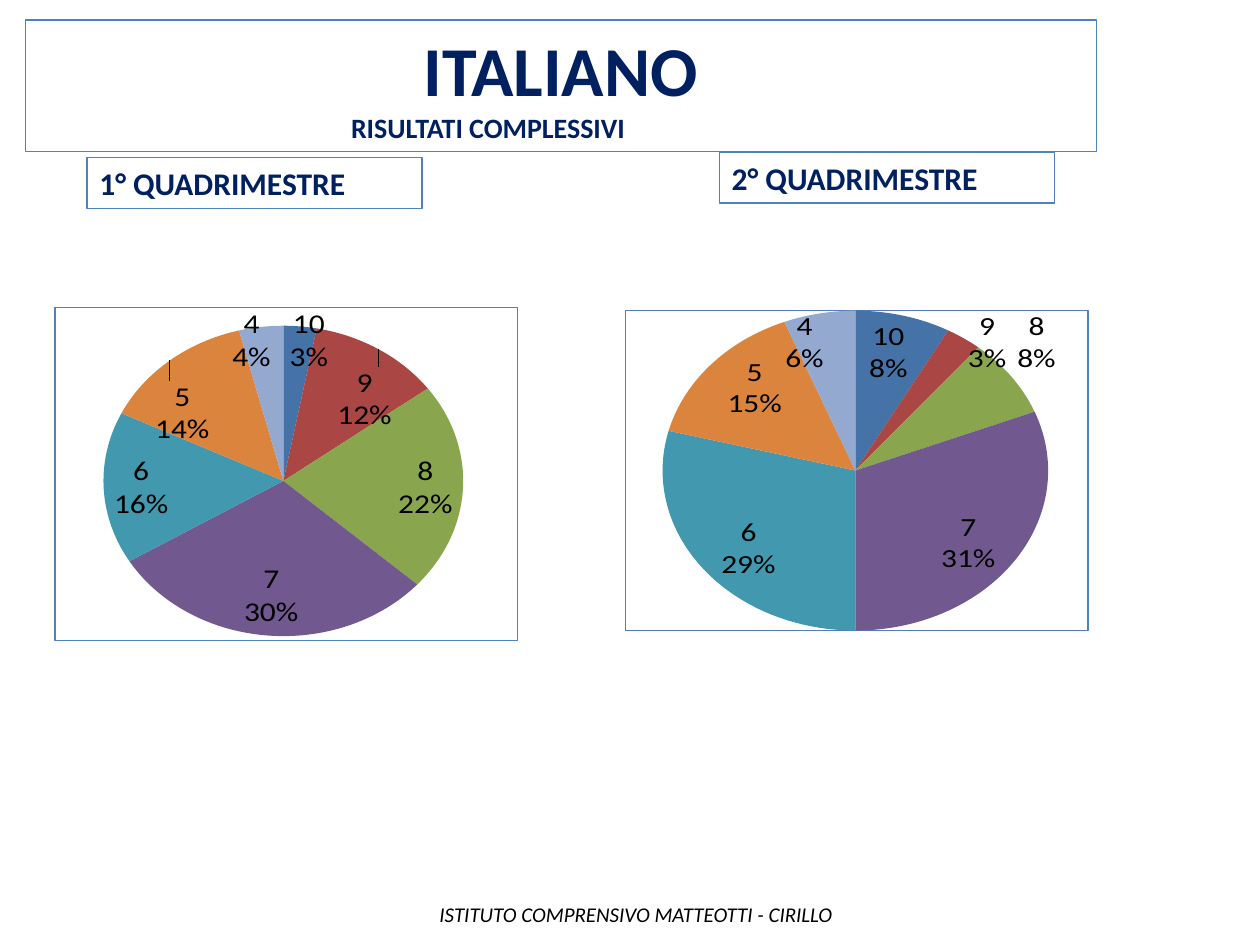
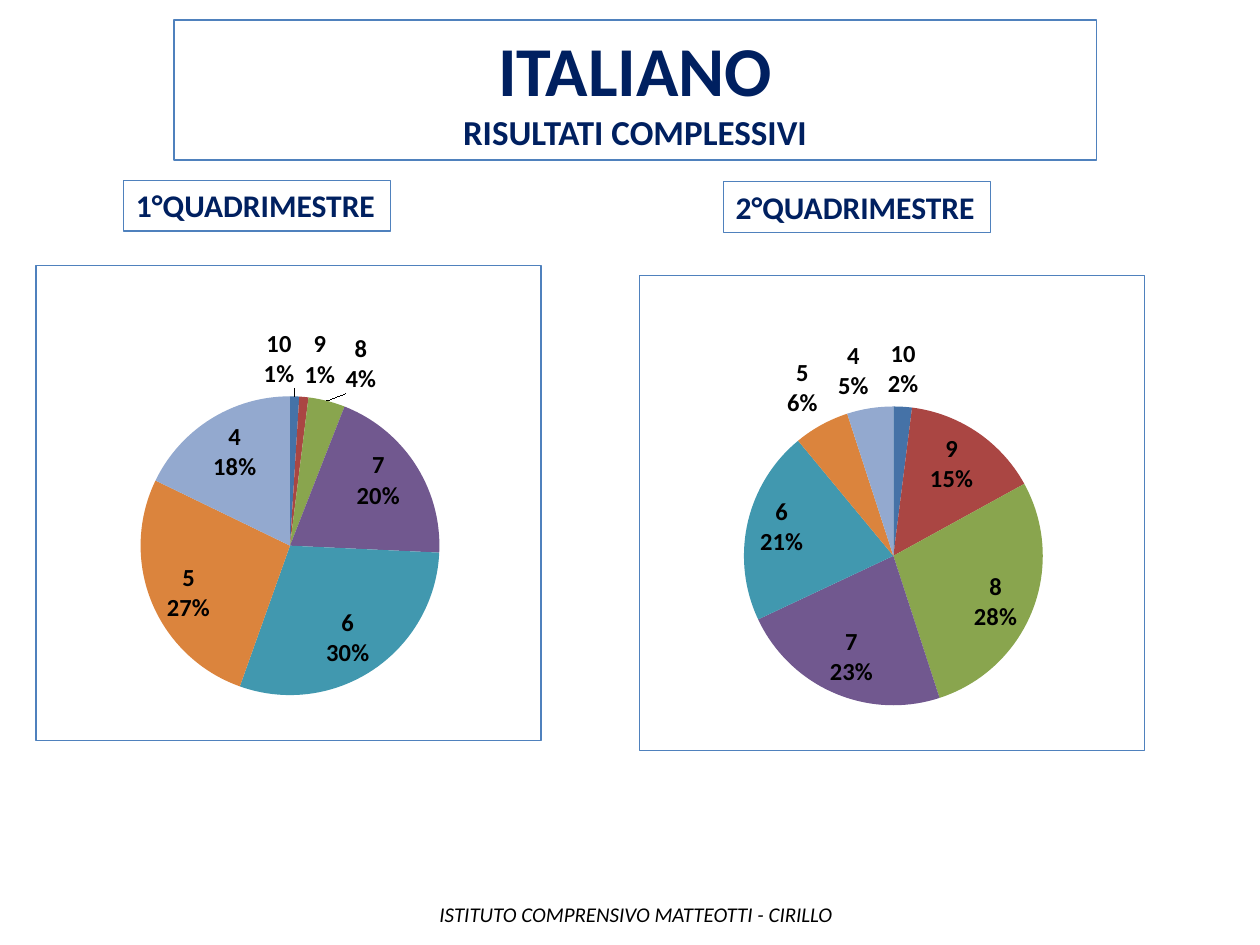
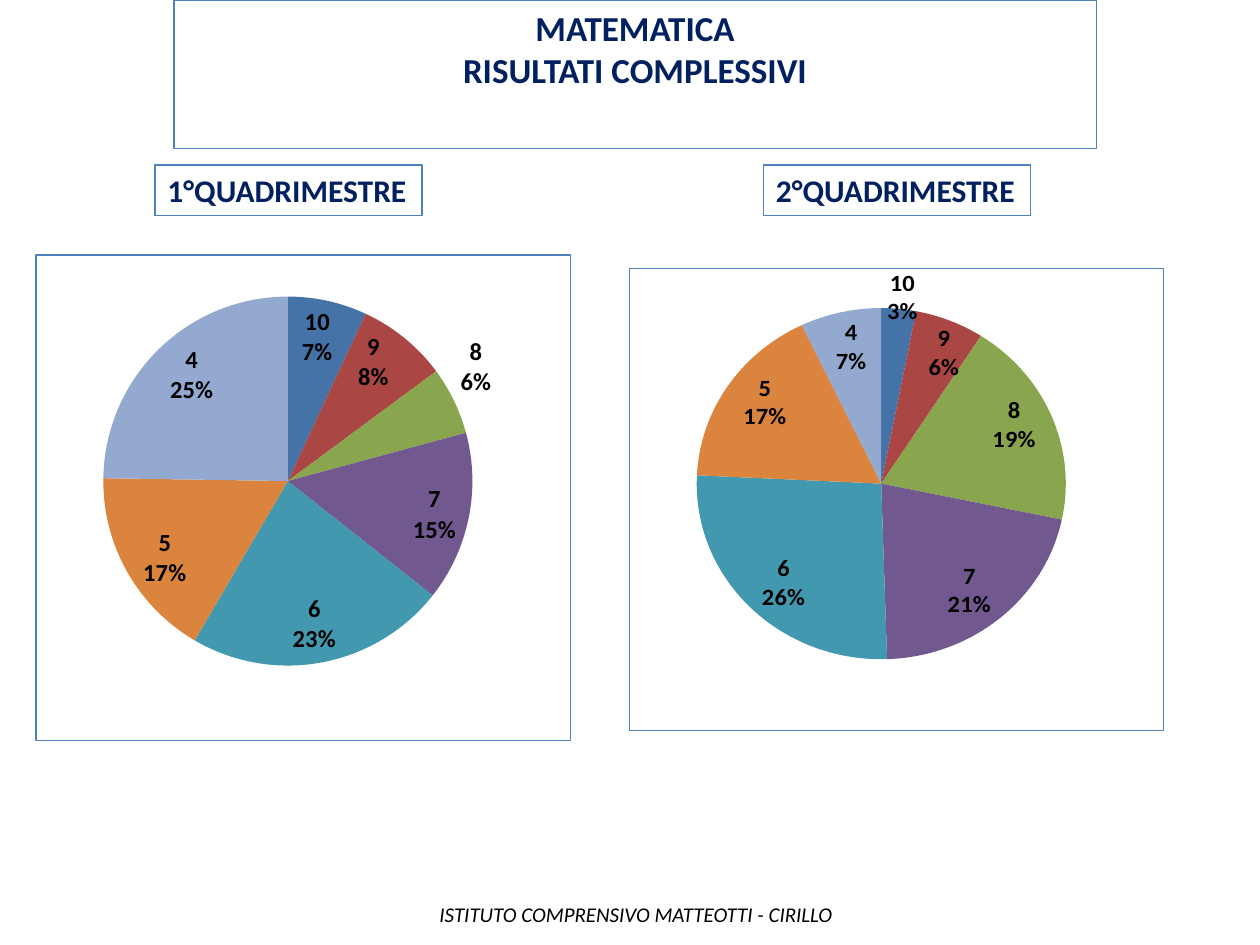
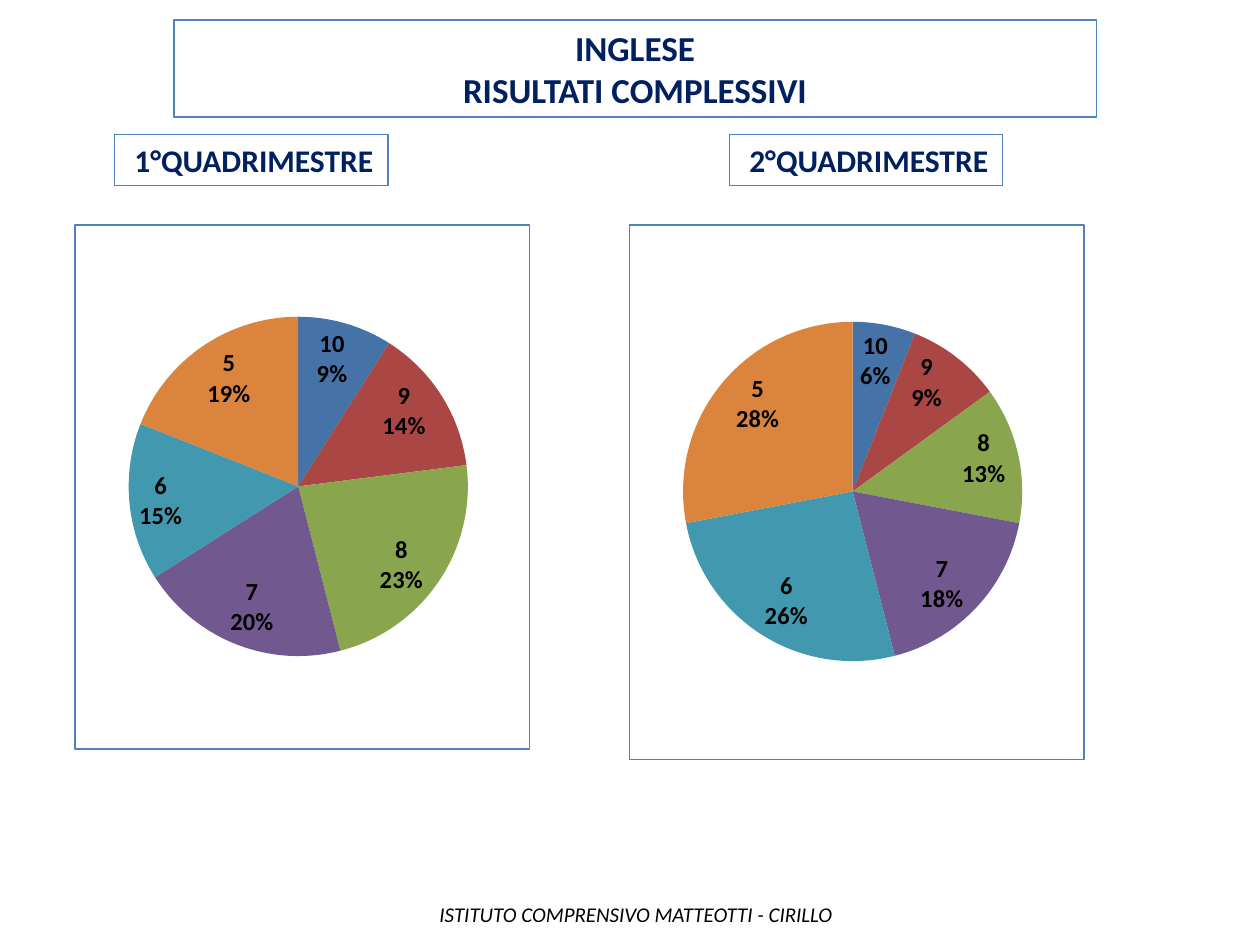
from dataclasses import dataclass

from pptx import Presentation
from pptx.chart.data import CategoryChartData
from pptx.dml.color import RGBColor
from pptx.enum.chart import XL_CHART_TYPE, XL_LABEL_POSITION
from pptx.enum.shapes import MSO_SHAPE
from pptx.enum.text import MSO_ANCHOR, MSO_AUTO_SIZE, PP_ALIGN
from pptx.oxml import parse_xml
from pptx.oxml.ns import nsdecls, qn
from pptx.util import Pt

PIE = XL_CHART_TYPE.PIE
BEST_FIT = XL_LABEL_POSITION.BEST_FIT
RECTANGLE = MSO_SHAPE.RECTANGLE
TOP = MSO_ANCHOR.TOP
FIXED_SIZE = MSO_AUTO_SIZE.NONE
LEFT, CENTER = PP_ALIGN.LEFT, PP_ALIGN.CENTER
TITLE_ONLY = 5


@dataclass(frozen=True)
class Theme:
    """Colours, font and type sizes shared by all slides."""

    font: str = "Calibri"
    navy: str = "002060"
    black: str = "000000"
    border: str = "4F81BD"
    slices: tuple = ("4572A7", "AA4643", "89A54E", "71588F",
                     "4198AF", "DB843D", "93A9CF")
    line: float = 0.75
    subject: int = 40
    heading: int = 20
    subheading: int = 16
    term: int = 18
    label: int = 14
    footer: int = 12


THEME = Theme()
GRADES = ("10", "9", "8", "7", "6", "5", "4")
RESULTS = "RISULTATI COMPLESSIVI"
FOOTER = "ISTITUTO COMPRENSIVO MATTEOTTI - CIRILLO"
FOOTER_PLACE = (241.2, 511.9, 248.4, 21.6)
WIDE_TITLE = (99.4, 11.5, 527)
LARGE_LABELS = {"size": Pt(THEME.term), "bold": False}
BOLD_LABELS = {"size": Pt(THEME.label), "bold": True}

SLIDES = (
    {
        "title": (14.4, 11.5, 612, 74.9),
        "lines": (("ITALIANO", THEME.subject, 0), (RESULTS, THEME.subheading, 179)),
        "labels": LARGE_LABELS,
        "plot": (0.105, 0.054, 0.778, 0.933),
        "terms": (
            {"text": "1° QUADRIMESTRE", "box": (49.7, 90, 191.5, 29),
             "chart": (31, 145.4, 265, 221), "values": (3, 12, 22, 30, 16, 14, 4)},
            {"text": "2° QUADRIMESTRE", "box": (411, 87.1, 191.5, 29),
             "chart": (357.1, 139.7, 265, 221), "values": (8, 3, 8, 31, 29, 15, 6),
             "plot": (0.074, 0, 0.846, 1)},
        ),
    },
    {
        "title": (*WIDE_TITLE, 79.9),
        "lines": (("ITALIANO", THEME.subject, 0), (RESULTS, THEME.heading, 0)),
        "plot": (0.183, 0.276, 0.64, 0.629),
        "terms": (
            {"text": "1°QUADRIMESTRE", "box": (70.6, 103, 152.6, 29),
             "chart": (20.2, 151.2, 289.4, 272.2), "values": (1, 1, 4, 20, 30, 27, 18)},
            {"text": "2°QUADRIMESTRE", "box": (413.3, 103.7, 152.6, 29),
             "chart": (365, 157, 289.4, 272.2), "values": (2, 15, 28, 23, 21, 6, 5)},
        ),
    },
    {
        "title": (99.4, 0, 527, 85),
        "lines": (("MATEMATICA", THEME.heading, 0), (RESULTS, THEME.heading, 0)),
        "plot": (0.126, 0.073, 0.691, 0.786),
        "terms": (
            {"text": "1°QUADRIMESTRE", "box": (88.6, 94.3, 152.6, 29),
             "chart": (20.2, 145.4, 306, 278), "values": (7, 8, 6, 15, 23, 17, 25)},
            {"text": "2°QUADRIMESTRE", "box": (436.3, 94.3, 152.6, 29),
             "chart": (359.3, 139.7, 306, 278), "values": (3, 6, 19, 21, 26, 17, 7)},
        ),
    },
    {
        "title": (*WIDE_TITLE, 55.4),
        "lines": (("INGLESE", THEME.heading, 0), (RESULTS, THEME.heading, 0)),
        "plot": (0.118, 0.173, 0.746, 0.652),
        "inset": 11.3,
        "terms": (
            {"text": "1°QUADRIMESTRE", "box": (65.5, 77, 156.2, 29),
             "chart": (42.5, 128.2, 260.6, 300.2), "values": (9, 14, 23, 20, 15, 19, 0)},
            {"text": "2°QUADRIMESTRE", "box": (416.9, 77, 156.2, 29),
             "chart": (359.3, 128.2, 260.6, 306), "values": (6, 9, 13, 18, 26, 28, 0)},
        ),
    },
)


def points(place):
    """Turn plain numbers into point lengths."""
    return [Pt(length) for length in place]


def set_format(target, values):
    """Set each named attribute on the target."""
    for name, value in values.items():
        setattr(target, name, value)


def style_font(font, color, **values):
    """Give a font the deck typeface, a colour and other values."""
    set_format(font, {"name": THEME.font, **values})
    font.color.rgb = RGBColor.from_string(color)


def outline(shape):
    """Give a shape the thin blue border and no fill."""
    shape.fill.background()
    shape.line.color.rgb = RGBColor.from_string(THEME.border)
    shape.line.width = Pt(THEME.line)


def add_title(page, place, lines):
    """Place the framed title with its two lines."""
    title = page.shapes.title
    set_format(title, dict(zip(("left", "top", "width", "height"), points(place))))
    outline(title)
    frame = title.text_frame
    set_format(frame, {"auto_size": FIXED_SIZE, "vertical_anchor": TOP,
                       "word_wrap": True})
    frame.text = "\n".join(text for text, _, _ in lines)
    for para, (_, size, indent) in zip(frame.paragraphs, lines):
        para.alignment = LEFT if indent else CENTER
        if indent:
            para._p.get_or_add_pPr().set("marL", str(Pt(indent)))
        style_font(para.runs[0].font, THEME.navy, size=Pt(size), bold=True)


def fill_line(frame, text, inset, color, **values):
    """Write one left-aligned line at the top of a text frame."""
    set_format(frame, {"vertical_anchor": TOP, "word_wrap": False,
                       "margin_left": Pt(inset)})
    para = frame.paragraphs[0]
    para.alignment = LEFT
    span = para.add_run()
    span.text = text
    style_font(span.font, color, **values)


def add_term(page, place, text, inset):
    """Add the framed name of a school term."""
    box = page.shapes.add_shape(RECTANGLE, *points(place))
    box.shadow.inherit = False
    outline(box)
    fill_line(box.text_frame, text, inset, THEME.navy,
              size=Pt(THEME.term), bold=True)


def add_footer(page):
    """Add the school name at the foot of the page."""
    box = page.shapes.add_textbox(*points(FOOTER_PLACE))
    fill_line(box.text_frame, FOOTER, 9.9, THEME.black,
              size=Pt(THEME.footer), italic=True)


def frame_chart(chart, plot_place):
    """Set the inner plot area and the border of a chart."""
    names = ("x", "y", "w", "h")
    modes = "".join(f'<c:{name}Mode val="edge"/>' for name in names[:2])
    sizes = "".join(f'<c:{name} val="{value}"/>'
                    for name, value in zip(names, plot_place))
    layout = parse_xml(
        f'<c:layout {nsdecls("c")}><c:manualLayout><c:layoutTarget val="inner"/>'
        f'{modes}{sizes}</c:manualLayout></c:layout>')
    space = chart._chartSpace
    area = space.find(qn("c:chart")).find(qn("c:plotArea"))
    for old in area.findall(qn("c:layout")):
        area.remove(old)
    area.insert(0, layout)
    border = parse_xml(
        f'<c:spPr {nsdecls("c", "a")}><a:noFill/><a:ln w="{Pt(THEME.line)}">'
        f'<a:solidFill><a:srgbClr val="{THEME.border}"/></a:solidFill></a:ln></c:spPr>')
    space.find(qn("c:txPr")).addprevious(border)


def label_slices(series, values, label_format):
    """Label each non-zero slice with its grade and share."""
    labels = series.data_labels
    set_format(labels, {"show_value": False, "show_category_name": True,
                        "show_percentage": True, "number_format": "0%",
                        "number_format_is_linked": False, "position": BEST_FIT})
    style_font(labels.font, THEME.black, **label_format)
    element = labels._element
    separator = parse_xml(f'<c:separator {nsdecls("c")}>\n</c:separator>')
    element.find(qn("c:showBubbleSize")).addnext(separator)
    empty = [index for index, value in enumerate(values) if value == 0]
    for position, index in enumerate(empty):
        element.insert(position, parse_xml(
            f'<c:dLbl {nsdecls("c")}><c:idx val="{index}"/>'
            '<c:delete val="1"/></c:dLbl>'))


def add_pie(page, place, values, plot_place, label_format):
    """Add a pie chart of the grades."""
    data = CategoryChartData()
    data.categories = GRADES
    data.add_series("Series 1", values)
    chart = page.shapes.add_chart(PIE, *points(place), data).chart
    set_format(chart, {"has_title": False, "has_legend": False})
    style_font(chart.font, THEME.black, size=Pt(THEME.term))
    frame_chart(chart, plot_place)
    plot = chart.plots[0]
    plot.vary_by_categories = True
    series = plot.series[0]
    for index, color in enumerate(THEME.slices):
        look = series.points[index].format
        look.fill.solid()
        look.fill.fore_color.rgb = RGBColor.from_string(color)
        look.line.fill.background()
    label_slices(series, values, label_format)


def add_page(deck, content):
    """Build one slide comparing the two school terms."""
    page = deck.slides.add_slide(deck.slide_layouts[TITLE_ONLY])
    add_title(page, content["title"], content["lines"])
    add_footer(page)
    for term in content["terms"]:
        add_pie(page, term["chart"], term["values"],
                term.get("plot", content["plot"]),
                content.get("labels", BOLD_LABELS))
        add_term(page, term["box"], term["text"], content.get("inset", 7.2))


def main():
    """Build and save the deck."""
    deck = Presentation()
    set_format(deck, {"slide_width": Pt(720), "slide_height": Pt(540)})
    for content in SLIDES:
        add_page(deck, content)
    deck.save("out.pptx")


if __name__ == "__main__":
    main()
